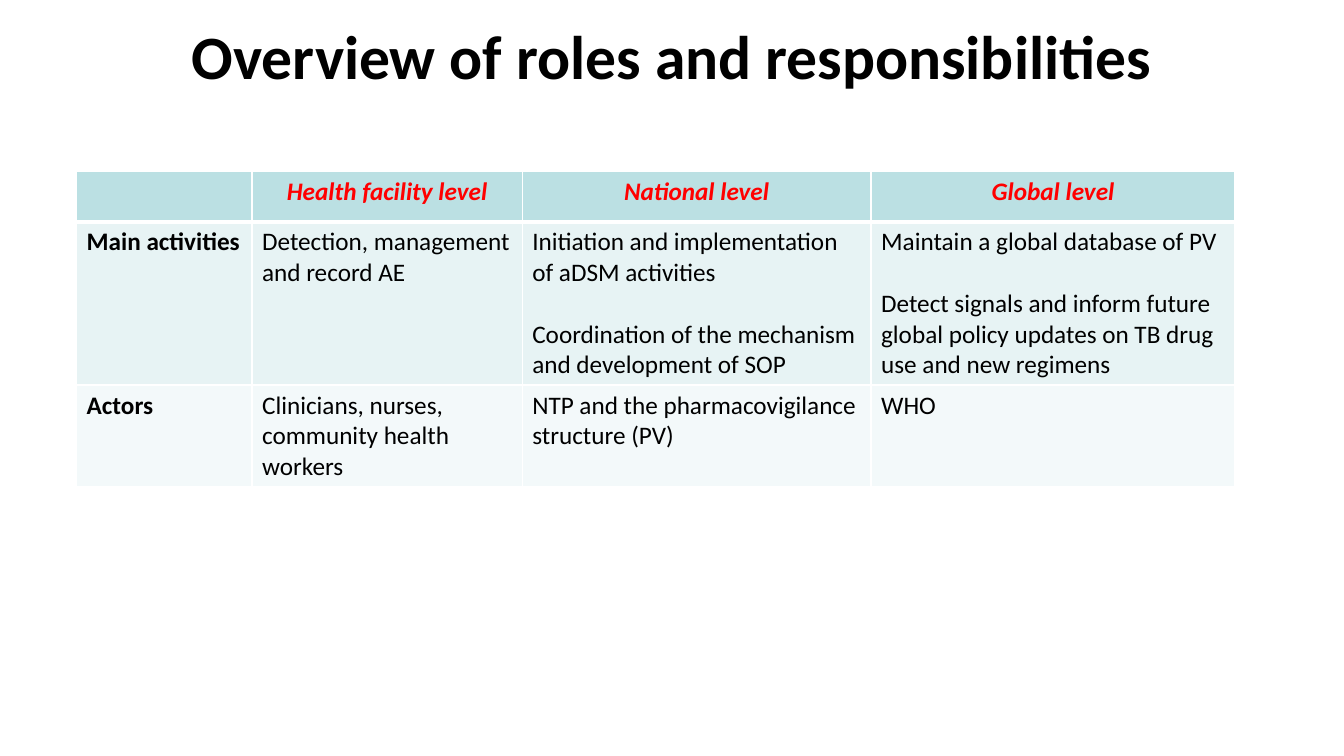
from lxml import etree
from pptx import Presentation, util as u
from pptx.dml.color import RGBColor
from pptx.enum import text
from pptx.oxml import ns

WIDE, HIGH = 13.33, 7.5
COLS = [1.74, 2.68, 3.46, 3.61]
ROWS = [0.5, 1.62, 1.01]
HUES = {
    "ink": "000000",
    "red": "FF0000",
    "line": "FFFFFF",
    "head": "BBE0E3",
    "band": "E7F3F4",
    "pale": "F3F9FA",
}
FILLS = ["head", "band", "pale"]
CELLS = [
    [[], ["Health facility level"], ["National level"], ["Global level"]],
    [
        ["Main activities"],
        ["Detection, management and record AE"],
        ["Initiation and implementation of aDSM activities",
         "Coordination of the mechanism and development of SOP"],
        ["Maintain a global database of PV",
         "Detect signals and inform future global policy updates on TB drug use and new regimens"],
    ],
    [
        ["Actors"],
        ["Clinicians, nurses, community health workers"],
        ["NTP and the pharmacovigilance structure (PV)"],
        ["WHO"],
    ],
]


def hue(name):
    return RGBColor.from_string(HUES[name])


def write(frame, lines, size=18, color="ink", bold=False, slant=False, mid=False, gap=22):
    frame.word_wrap = True
    for i, line in enumerate(lines):
        para = frame.paragraphs[0] if i == 0 else frame.add_paragraph()
        para.alignment = text.PP_ALIGN.CENTER if mid else text.PP_ALIGN.LEFT
        if i:
            para.space_before = u.Pt(gap)
        run = para.add_run()
        run.text = line
        font = run.font
        font.name, font.size = "Calibri", u.Pt(size)
        font.bold, font.italic = bold, slant
        font.color.rgb = hue(color)


def edge(cell, side, width):
    props = cell._tc.get_or_add_tcPr()
    line = etree.SubElement(props, ns.qn(f"a:ln{side}"), w=str(u.Pt(width)))
    fill = etree.SubElement(line, ns.qn("a:solidFill"))
    etree.SubElement(fill, ns.qn("a:srgbClr"), val=HUES["line"])


def title(slide, words):
    box = slide.shapes.add_textbox(
        u.Inches(0.42), u.Inches(0.13), u.Inches(12.49), u.Inches(1.25))
    box.text_frame.vertical_anchor = text.MSO_ANCHOR.TOP
    write(box.text_frame, [words], size=44, bold=True, mid=True)


def grid(slide):
    frame = slide.shapes.add_table(
        len(ROWS), len(COLS), u.Inches(0.76), u.Inches(1.7),
        u.Inches(sum(COLS)), u.Inches(sum(ROWS)))
    table = frame.table
    for col, width in zip(table.columns, COLS):
        col.width = u.Inches(width)
    for r, high in enumerate(ROWS):
        table.rows[r].height = u.Inches(high)
        for c, lines in enumerate(CELLS[r]):
            cell = table.cell(r, c)
            for side in "LRTB":
                thick = (r, side) in [(0, "B"), (1, "T")]
                edge(cell, side, 3 if thick else 1)
            cell.fill.solid()
            cell.fill.fore_color.rgb = hue(FILLS[r])
            top = r == 0
            write(cell.text_frame, lines, color="red" if top else "ink",
                  bold=top or c == 0, slant=top, mid=top)


def main():
    deck = Presentation()
    deck.slide_width, deck.slide_height = u.Inches(WIDE), u.Inches(HIGH)
    slide = deck.slides.add_slide(deck.slide_layouts[6])
    title(slide, "Overview of roles and responsibilities")
    grid(slide)
    deck.save("out.pptx")


if __name__ == "__main__":
    main()
